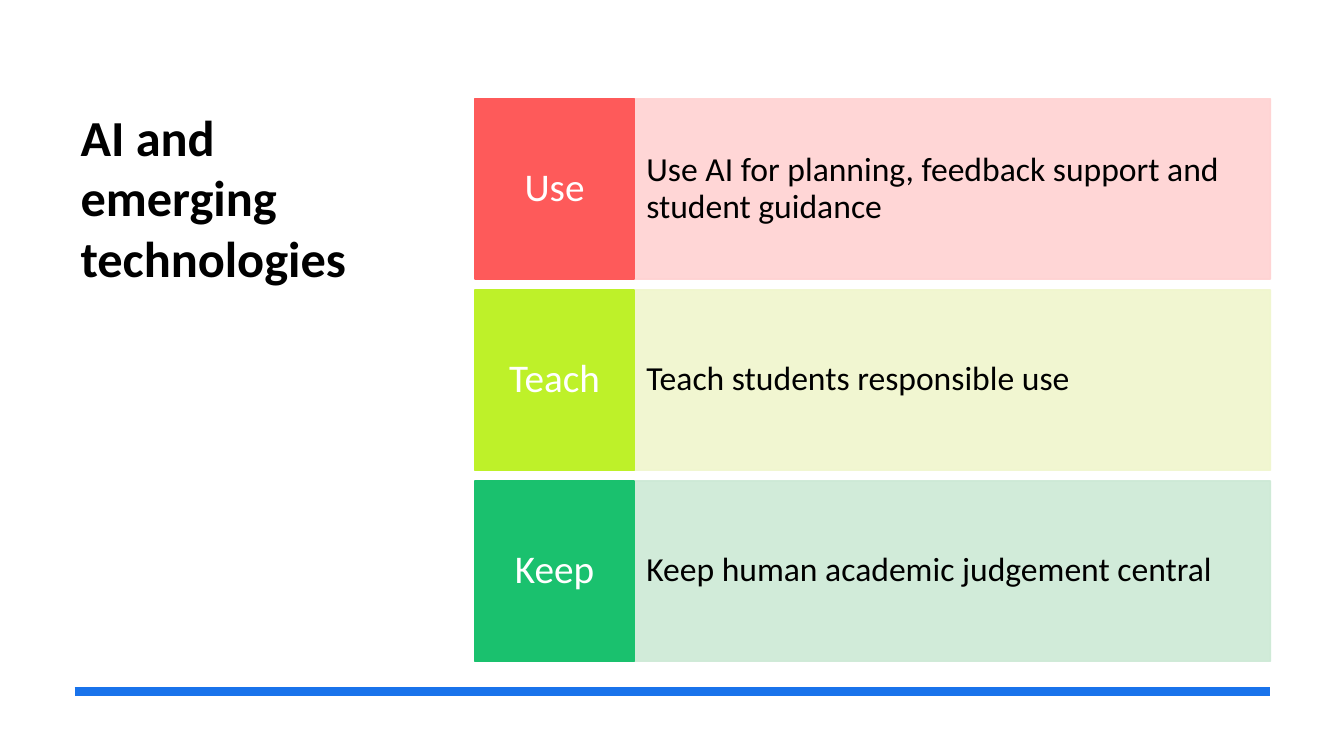
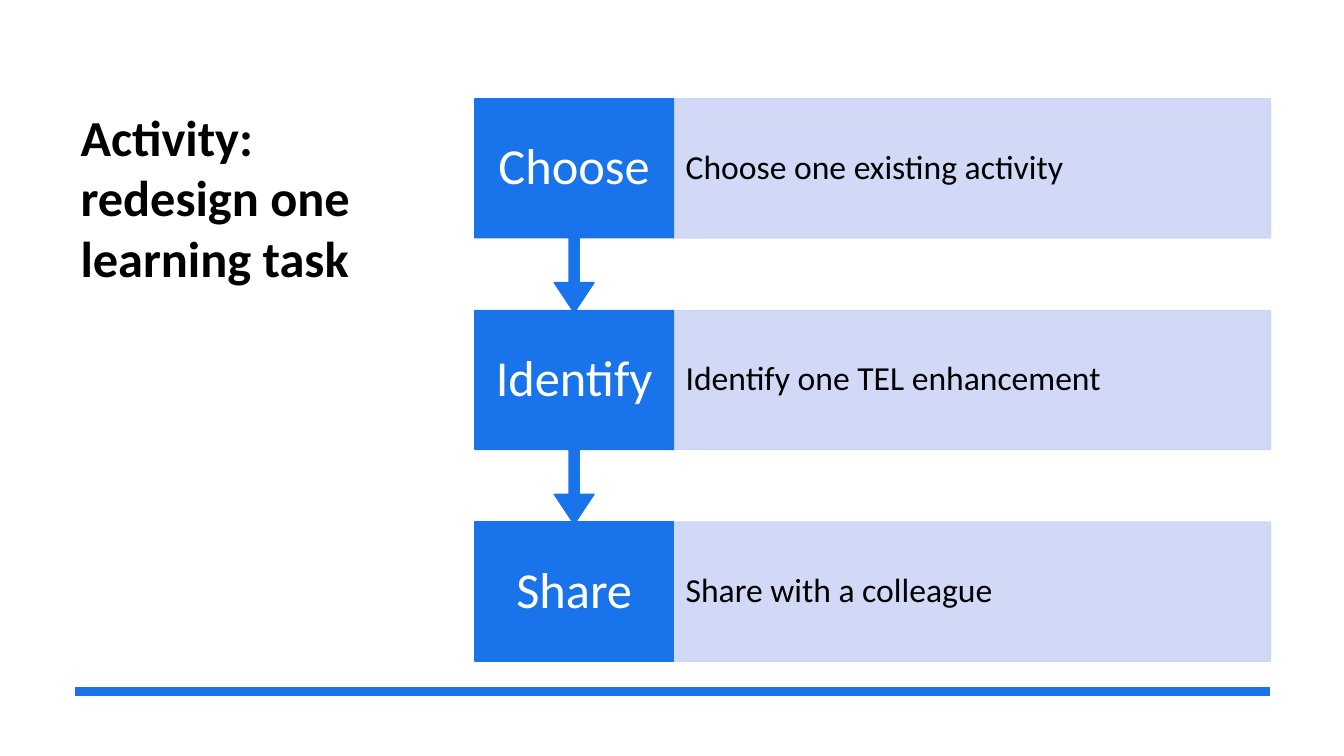
import lxml.etree
import pptx
import pptx.dml.color
import pptx.enum.shapes
import pptx.enum.text
import pptx.oxml.ns
import pptx.util

Inches = pptx.util.Inches
Shapes = pptx.enum.shapes.MSO_SHAPE
Anchor = pptx.enum.text.MSO_ANCHOR
Align = pptx.enum.text.PP_ALIGN

FONT = "Calibri"
COLORS = {
    "blue": "1973EB", "pale blue": "CCD5F7",
    "red": "FE5A5A", "pale red": "FFD2D2",
    "lime": "BEF129", "pale lime": "F0F6CD",
    "green": "1AC16E", "pale green": "CCE9D5",
    "black": "000000", "white": "FFFFFF",
}
SLIDES = [
    {
        "title": "AI and emerging technologies",
        "rows": [
            ("Use", "Use AI for planning, feedback support and student guidance", "red"),
            ("Teach", "Teach students responsible use", "lime"),
            ("Keep", "Keep human academic judgement central", "green"),
        ],
        "label_width": 1.58, "row_height": 1.79, "label_size": 28,
        "label_inset": 0.08, "arrows": False,
    },
    {
        "title": "Activity: redesign one learning task",
        "rows": [
            ("Choose", "Choose one existing activity", "blue"),
            ("Identify", "Identify one TEL enhancement", "blue"),
            ("Share", "Share with a colleague", "blue"),
        ],
        "label_width": 1.97, "row_height": 1.38, "label_size": 36,
        "label_inset": 0.14, "arrows": True,
    },
]
LEFT, RIGHT, TOP, BOTTOM = 4.71, 12.6, 0.98, 6.56
CALLOUT_HEIGHT = 2.12
CALLOUT_ADJUSTMENTS = (0.05, 0.1, 0.15, 0.65)


def rgb(name):
    return pptx.dml.color.RGBColor.from_string(COLORS[name])


def write_text(shape, text, size, color="black", bold=False, align=Align.LEFT,
               anchor=Anchor.MIDDLE, spacing=0.9, inset=0.12):
    frame = shape.text_frame
    frame.word_wrap = True
    frame.vertical_anchor = anchor
    frame.margin_left = frame.margin_right = Inches(inset)
    frame.margin_top = frame.margin_bottom = Inches(0.05)
    paragraph = frame.paragraphs[0]
    paragraph.alignment = align
    paragraph.line_spacing = spacing
    run = paragraph.add_run()
    run.text = text
    run.font.name = FONT
    run.font.size = pptx.util.Pt(size)
    run.font.bold = bold
    run.font.color.rgb = rgb(color)


def add_box(slide, kind, left, top, width, height, color, opacity=100):
    shape = slide.shapes.add_shape(
        kind, Inches(left), Inches(top), Inches(width), Inches(height))
    shape.shadow.inherit = False
    shape.fill.solid()
    shape.fill.fore_color.rgb = rgb(color)
    shape.line.color.rgb = rgb(color)
    shape.line.width = pptx.util.Pt(1)
    if opacity < 100:
        for element in shape._element.spPr.iter(pptx.oxml.ns.qn("a:srgbClr")):
            alpha = lxml.etree.SubElement(element, pptx.oxml.ns.qn("a:alpha"))
            alpha.set("val", str(opacity * 1000))
    return shape


def add_frame(slide, title):
    box = slide.shapes.add_textbox(Inches(0.7), Inches(1), Inches(3.28), Inches(4.55))
    write_text(box, title, 36, bold=True, anchor=Anchor.TOP, spacing=1.0, inset=0.1)
    rule = slide.shapes.add_connector(
        pptx.enum.shapes.MSO_CONNECTOR.STRAIGHT,
        Inches(0.74), Inches(6.86), Inches(RIGHT), Inches(6.86))
    rule.line.color.rgb = rgb("blue")
    rule.line.width = pptx.util.Pt(6)
    lxml.etree.SubElement(rule._element.spPr, pptx.oxml.ns.qn("a:effectLst"))


def add_rows(slide, content):
    rows = content["rows"]
    width, height = content["label_width"], content["row_height"]
    pitch = (BOTTOM - TOP - height) / (len(rows) - 1)
    for index, (label, detail, color) in reversed(list(enumerate(rows))):
        top = TOP + index * pitch
        detail_left = LEFT + width
        detail_box = add_box(slide, Shapes.RECTANGLE, detail_left, top,
                             RIGHT - detail_left, height, f"pale {color}", opacity=90)
        write_text(detail_box, detail, 24)
        if content["arrows"] and index < len(rows) - 1:
            label_box = add_box(slide, Shapes.DOWN_ARROW_CALLOUT, LEFT, top,
                                width, CALLOUT_HEIGHT, color)
            for position, value in enumerate(CALLOUT_ADJUSTMENTS):
                label_box.adjustments[position] = value
        else:
            label_box = add_box(slide, Shapes.RECTANGLE, LEFT, top, width, height, color)
        write_text(label_box, label, content["label_size"], color="white",
                   align=Align.CENTER, inset=content["label_inset"])


def main():
    presentation = pptx.Presentation()
    presentation.slide_width = Inches(13.33)
    presentation.slide_height = Inches(7.5)
    for content in SLIDES:
        slide = presentation.slides.add_slide(presentation.slide_layouts[6])
        add_frame(slide, content["title"])
        add_rows(slide, content)
    presentation.save("out.pptx")


if __name__ == "__main__":
    main()
